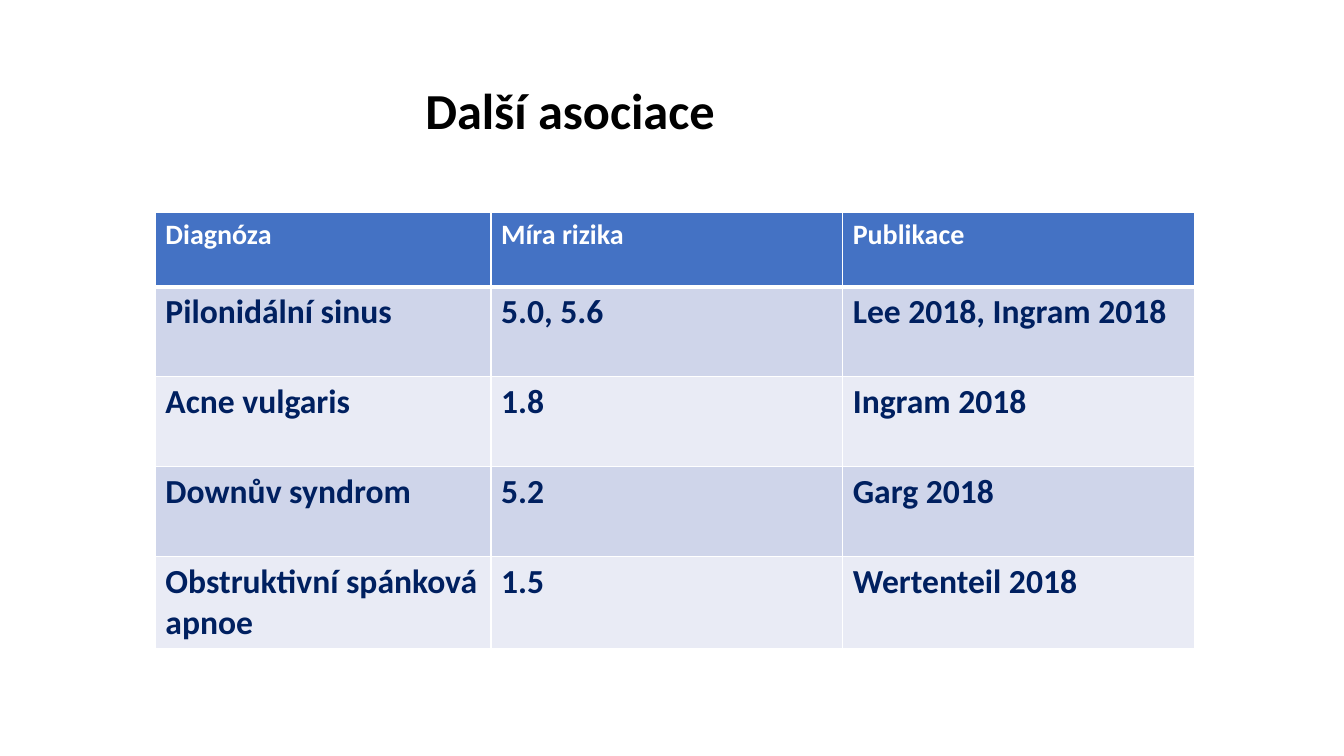
from lxml.etree import SubElement
from pptx import Presentation
from pptx.dml.color import RGBColor
from pptx.enum.text import MSO_ANCHOR as Anchor, MSO_AUTO_SIZE as AutoSize, PP_ALIGN as Align
from pptx.oxml.ns import qn
from pptx.util import Pt

TITLE = "Další asociace"
ROWS = [
    ("Diagnóza", "Míra rizika", "Publikace"),
    ("Pilonidální sinus", "5.0, 5.6", "Lee 2018, Ingram 2018"),
    ("Acne vulgaris", "1.8", "Ingram 2018"),
    ("Downův syndrom", "5.2", "Garg 2018"),
    ("Obstruktivní spánková apnoe", "1.5", "Wertenteil 2018"),
]
COLUMN_WIDTHS = [239.75, 251.25, 251.25]
HEADER_HEIGHT, BODY_HEIGHT = 53, 64.2

BLACK = RGBColor(0, 0, 0)
WHITE = RGBColor(255, 255, 255)
NAVY = RGBColor(0x00, 0x20, 0x60)
BLUE = RGBColor(0x44, 0x72, 0xC4)
BANDS = [RGBColor(0xE9, 0xEB, 0xF5), RGBColor(0xCF, 0xD5, 0xEA)]


def apply_format(target, values):
    for name, value in values.items():
        setattr(target, name, value)


def style_text(para, size, color):
    apply_format(para.font, {"name": "Calibri", "size": Pt(size), "bold": True})
    para.font.color.rgb = color


def add_borders(cell, widths):
    properties = cell._tc.get_or_add_tcPr()
    for side, width in widths.items():
        line = SubElement(properties, qn(f"a:ln{side}"), w=str(Pt(width)))
        fill = SubElement(line, qn("a:solidFill"))
        SubElement(fill, qn("a:srgbClr"), val=str(WHITE))


def add_title(page):
    title = page.shapes.title
    apply_format(title, {"left": Pt(296.6), "top": Pt(28.8), "width": Pt(597.6), "height": Pt(104.4)})
    frame = title.text_frame
    frame.text = TITLE
    apply_format(frame, {"word_wrap": True, "auto_size": AutoSize.NONE, "vertical_anchor": Anchor.MIDDLE})
    para = frame.paragraphs[0]
    apply_format(para, {"alignment": Align.LEFT, "line_spacing": 0.9})
    style_text(para, 36, BLACK)


def add_risk_table(page):
    heights = [HEADER_HEIGHT] + [BODY_HEIGHT] * (len(ROWS) - 1)
    table = page.shapes.add_table(
        len(ROWS), len(COLUMN_WIDTHS), Pt(111), Pt(152),
        Pt(sum(COLUMN_WIDTHS)), Pt(sum(heights))).table
    for column, width in zip(table.columns, COLUMN_WIDTHS):
        column.width = Pt(width)
    for index, (row, height, texts) in enumerate(zip(table.rows, heights, ROWS)):
        row.height = Pt(height)
        header = index == 0
        for cell, text in zip(row.cells, texts):
            cell.text = text
            style_text(cell.text_frame.paragraphs[0], 20 if header else 24, WHITE if header else NAVY)
            add_borders(cell, {"L": 1, "R": 1, "T": 3 if index == 1 else 1, "B": 3 if header else 1})
            cell.fill.solid()
            cell.fill.fore_color.rgb = BLUE if header else BANDS[index % 2]


def main():
    deck = Presentation()
    apply_format(deck, {"slide_width": Pt(960), "slide_height": Pt(540)})
    page = deck.slides.add_slide(deck.slide_layouts[5])
    add_title(page)
    add_risk_table(page)
    deck.save("out.pptx")


if __name__ == "__main__":
    main()
